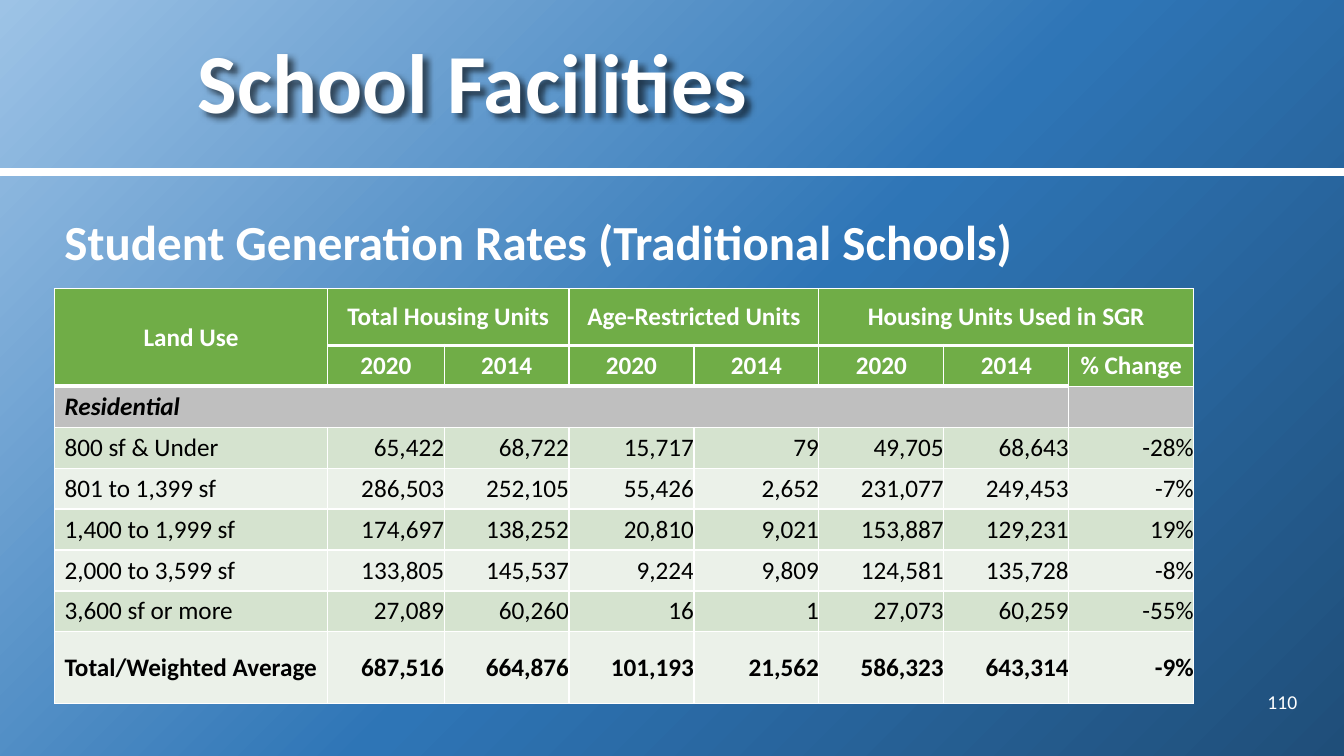
from dataclasses import dataclass

from lxml.etree import SubElement
from pptx import Presentation
from pptx.dml.color import RGBColor
from pptx.enum.shapes import MSO_CONNECTOR as Connector
from pptx.enum.text import MSO_ANCHOR as Anchor, PP_ALIGN as Align
from pptx.oxml import parse_xml
from pptx.oxml.ns import nsdecls, qn
from pptx.util import Emu, Pt

PX = 9525
FONT = "Calibri"
WHITE, BLACK = "FFFFFF", "000000"
GREEN, GREY = "70AD47", "BFBFBF"
BANDS = ("D5E3CF", "EBF1E9")
GRADIENT = ((0, "9DC3E6"), (53, "2E75B6"), (100, "1F4E79"))
COLUMN_WIDTHS = [260, 111] + [119] * 6
ROW_HEIGHTS = [54] + [39] * 7 + [68]
YEARS = ("2020", "2014") * 3 + ("% Change",)


@dataclass(frozen=True)
class TextItem:
    text: str
    left: int
    top: int
    width: int
    height: int
    size: int
    bold: bool = True
    align: Align = Align.LEFT
    anchor: Anchor = Anchor.MIDDLE
    line_spacing: float = 1.0
    shadow: bool = False


@dataclass(frozen=True)
class HeaderGroup:
    text: str
    row: int
    column: int
    last_row: int
    last_column: int


@dataclass(frozen=True)
class LandUse:
    name: str
    values: str
    bold: bool = False


TEXTS = (
    TextItem("School Facilities", 179, 0, 1066, 164, 60, line_spacing=0.9, shadow=True),
    TextItem("110", 1160, 649, 85, 38, 14, bold=False, align=Align.RIGHT),
    TextItem("Student Generation Rates (Traditional Schools)", 52, 186, 1192, 506, 35,
             anchor=Anchor.TOP, line_spacing=1.2),
)
GROUPS = (
    HeaderGroup("Land Use", 0, 0, 1, 0),
    HeaderGroup("Total Housing Units", 0, 1, 0, 2),
    HeaderGroup("Age-Restricted Units", 0, 3, 0, 4),
    HeaderGroup("Housing Units Used in SGR", 0, 5, 0, 7),
)
LAND_USES = (
    LandUse("800 sf & Under", "65,422 68,722 15,717 79 49,705 68,643 -28%"),
    LandUse("801 to 1,399 sf", "286,503 252,105 55,426 2,652 231,077 249,453 -7%"),
    LandUse("1,400 to 1,999 sf", "174,697 138,252 20,810 9,021 153,887 129,231 19%"),
    LandUse("2,000 to 3,599 sf", "133,805 145,537 9,224 9,809 124,581 135,728 -8%"),
    LandUse("3,600 sf or more", "27,089 60,260 16 1 27,073 60,259 -55%"),
    LandUse("Total/Weighted Average", "687,516 664,876 101,193 21,562 586,323 643,314 -9%", True),
)


def px(length: int) -> Emu:
    """Turn pixels into EMU."""
    return Emu(length * PX)


def rgb(color: str) -> RGBColor:
    """Turn a hex string into a colour."""
    return RGBColor.from_string(color)


def add_run(paragraph, text: str, size: int, color: str, bold: bool, italic: bool = False) -> None:
    """Add one formatted run to a paragraph."""
    run = paragraph.add_run()
    run.text = text
    font = run.font
    font.name, font.size, font.bold, font.italic = FONT, Pt(size), bold, italic
    font.color.rgb = rgb(color)


def paint_background(slide) -> None:
    """Fill the background with a gradient spreading from the top left corner."""
    slide.background.fill.gradient()
    stops = "".join(f'<a:gs pos="{position * 1000}"><a:srgbClr val="{color}"/></a:gs>'
                    for position, color in GRADIENT)
    gradient = slide.element.find(".//" + qn("a:gradFill"))
    gradient.getparent().replace(gradient, parse_xml(
        f'<a:gradFill {nsdecls("a")} rotWithShape="1"><a:gsLst>{stops}</a:gsLst>'
        '<a:path path="circle"><a:fillToRect r="100000" b="100000"/></a:path></a:gradFill>'))


def add_divider(slide) -> None:
    """Draw the white line below the title."""
    line = slide.shapes.add_connector(Connector.STRAIGHT, 0, px(164), px(1280), px(164))
    line.line.color.rgb = rgb(WHITE)
    line.line.width = Pt(6)
    SubElement(line.element.spPr, qn("a:effectLst"))


def add_text(slide, item: TextItem) -> None:
    """Place one text box."""
    shape = slide.shapes.add_textbox(px(item.left), px(item.top), px(item.width), px(item.height))
    frame = shape.text_frame
    frame.word_wrap = True
    frame.vertical_anchor = item.anchor
    paragraph = frame.paragraphs[0]
    paragraph.alignment = item.align
    paragraph.line_spacing = item.line_spacing
    add_run(paragraph, item.text, item.size, WHITE, item.bold)
    if item.shadow:
        shape.element.spPr.append(parse_xml(
            f'<a:effectLst {nsdecls("a")}><a:outerShdw blurRad="50800" dist="50800" dir="2700000">'
            f'<a:srgbClr val="{BLACK}"><a:alpha val="60000"/></a:srgbClr></a:outerShdw></a:effectLst>'))


def rule_width(row: int, column: int) -> int:
    """Give the width in points of the rule below a cell."""
    return 3 if row == 0 or (row == 1 and column < 7) else 1


def style_cell(cell, row: int, column: int, fill: str) -> None:
    """Set the borders, fill and anchor of a cell."""
    properties = cell._tc.get_or_add_tcPr()
    widths = {"L": 1, "R": 1, "T": rule_width(row - 1, column) if row else 1,
              "B": rule_width(row, column)}
    for side, width in widths.items():
        properties.append(parse_xml(
            f'<a:ln{side} {nsdecls("a")} w="{Pt(width)}"><a:solidFill>'
            f'<a:srgbClr val="{WHITE}"/></a:solidFill></a:ln{side}>'))
    cell.fill.solid()
    cell.fill.fore_color.rgb = rgb(fill)
    cell.vertical_anchor = Anchor.MIDDLE


def write_cell(cell, text: str, color: str, align: Align, bold: bool, italic: bool = False) -> None:
    """Write the text of a cell."""
    paragraph = cell.text_frame.paragraphs[0]
    paragraph.alignment = align
    add_run(paragraph, text, 18, color, bold, italic)


def add_rates_table(slide) -> None:
    """Build the table of housing units by land use."""
    table = slide.shapes.add_table(len(ROW_HEIGHTS), len(COLUMN_WIDTHS), px(52), px(275),
                                   px(sum(COLUMN_WIDTHS)), px(sum(ROW_HEIGHTS))).table
    table.first_row = table.horz_banding = False
    for column, width in enumerate(COLUMN_WIDTHS):
        table.columns[column].width = px(width)
    fills = [GREEN, GREEN, GREY] + [BANDS[index % 2] for index in range(len(LAND_USES))]
    for row, height in enumerate(ROW_HEIGHTS):
        table.rows[row].height = px(height)
        for column in range(len(COLUMN_WIDTHS)):
            style_cell(table.cell(row, column), row, column, fills[row])
    for group in GROUPS:
        cell = table.cell(group.row, group.column)
        cell.merge(table.cell(group.last_row, group.last_column))
        write_cell(cell, group.text, WHITE, Align.CENTER, True)
    for column, year in enumerate(YEARS, 1):
        write_cell(table.cell(1, column), year, WHITE, Align.CENTER, True)
    table.cell(2, 0).merge(table.cell(2, 6))
    write_cell(table.cell(2, 0), "Residential", BLACK, Align.LEFT, True, True)
    for row, land_use in enumerate(LAND_USES, 3):
        write_cell(table.cell(row, 0), land_use.name, BLACK, Align.LEFT, land_use.bold)
        for column, value in enumerate(land_use.values.split(), 1):
            cell = table.cell(row, column)
            cell.margin_left = cell.margin_right = cell.margin_top = cell.margin_bottom = 0
            write_cell(cell, value, BLACK, Align.RIGHT, land_use.bold)


def main() -> None:
    """Build and save the slide."""
    presentation = Presentation()
    presentation.slide_width, presentation.slide_height = px(1280), px(720)
    slide = presentation.slides.add_slide(presentation.slide_layouts[6])
    paint_background(slide)
    add_divider(slide)
    for item in TEXTS:
        add_text(slide, item)
    add_rates_table(slide)
    presentation.save("out.pptx")


if __name__ == "__main__":
    main()
